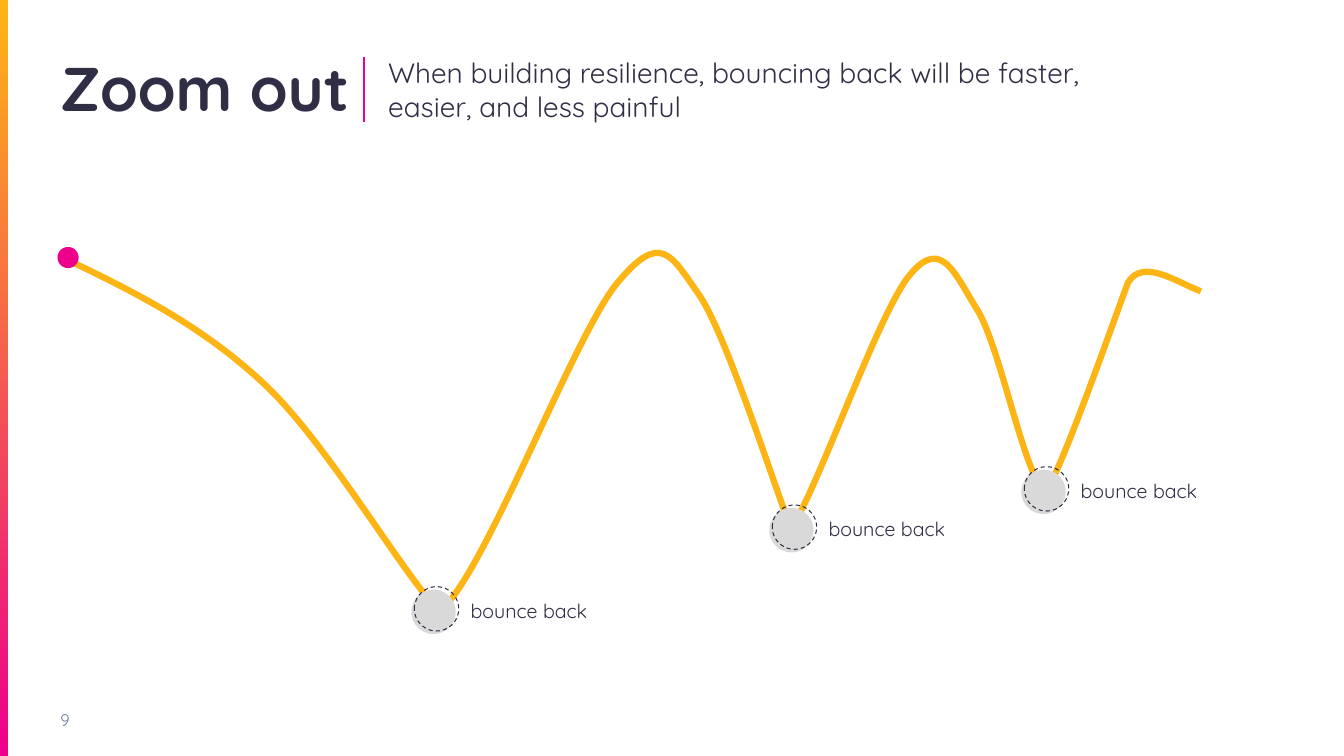
from lxml import etree
from pptx import Presentation
from pptx import util as u
from pptx.dml.color import RGBColor
from pptx.enum import dml, shapes, text

FONT = "Quicksand"
DRAWING = "{http://schemas.openxmlformats.org/drawingml/2006/main}"
COLORS = {"ink": "302E45", "orange": "FDB515", "pink": "EC008C",
          "ball": "D9D9D9", "number": "6E7CA0"}
SLIDE_WIDTH, SLIDE_HEIGHT = 13.33, 7.5

TITLE = "Zoom out"
SUBTITLE = ("When building resilience, bouncing back will be faster, "
            "easier, and less painful")
PAGE_NUMBER = "9"
BOUNCE_LABEL = "bounce back"
BOUNCES = [(4.08, 5.85), (7.63, 5.04), (10.13, 4.66)]
BALL_SIZE = 0.44
START_DOT = (0.57, 2.45, 0.21, 0.21)

# Each curve: two control points and an end point
CURVE_BOX = (0.59, 2.51, 11.32, 3.55)
CURVE_START = (0.59, 2.54)
CURVES = [
    ((1.28, 2.87), (1.98, 3.21), (2.61, 3.8)),
    ((3.24, 4.38), (4.04, 5.77), (4.36, 6.06)),
    ((4.78, 5.76), (5.69, 3.33), (6.12, 2.81)),
    ((6.55, 2.29), (6.65, 2.52), (6.93, 2.92)),
    ((7.22, 3.33), (7.77, 5.11), (7.85, 5.24)),
    ((8.14, 4.78), (8.72, 3.08), (9.03, 2.72)),
    ((9.34, 2.35), (9.47, 2.72), (9.69, 3.07)),
    ((9.92, 3.43), (10.17, 4.77), (10.36, 4.85)),
    ((10.41, 5.02), (11.18, 2.8), (11.19, 2.8)),
    ((11.34, 2.56), (11.67, 2.8), (11.91, 2.89)),
]


def color(name):
    return RGBColor.from_string(COLORS[name])


def inches(*values):
    return [u.Inches(value) for value in values]


def add_text(parent, content, box, size, color_name="ink", bold=False,
             insets=(0, 0, 0, 0), anchor=text.MSO_ANCHOR.TOP):
    frame = parent.shapes.add_textbox(*inches(*box)).text_frame
    frame.word_wrap = True
    frame.vertical_anchor = anchor
    (frame.margin_left, frame.margin_top,
     frame.margin_right, frame.margin_bottom) = inches(*insets)
    frame.text = content
    font = frame.paragraphs[0].runs[0].font
    font.name, font.size, font.bold = FONT, u.Pt(size), bold
    font.color.rgb = color(color_name)


def add_filled(parent, preset, box, color_name):
    shape = parent.shapes.add_shape(preset, *inches(*box))
    shape.shadow.inherit = False
    shape.fill.solid()
    shape.fill.fore_color.rgb = color(color_name)
    shape.line.fill.background()
    return shape


def style_line(shape, color_name, width):
    shape.line.color.rgb = color(color_name)
    shape.line.width = u.Pt(width)


def add_side_bar(slide):
    bar = add_filled(slide, shapes.MSO_SHAPE.RECTANGLE,
                     (0, 0, 0.08, SLIDE_HEIGHT), "orange")
    bar.fill.gradient()
    bar.fill.gradient_angle = 270
    for stop, position, name in zip(bar.fill.gradient_stops, (0, 1),
                                    ("orange", "pink")):
        stop.position = position
        stop.color.rgb = color(name)


def add_header(slide):
    add_text(slide, TITLE, (0.6, 0.5, 6.94, 0.61), 44, bold=True)
    divider = slide.shapes.add_connector(
        shapes.MSO_CONNECTOR.STRAIGHT, *inches(3.61, 0.57, 3.61, 1.21))
    style_line(divider, "pink", 1.5)
    etree.SubElement(divider._element.spPr, DRAWING + "effectLst")
    add_text(slide, SUBTITLE, (3.85, 0.55, 6.94, 0.61), 20)


def bend_segments(shape):
    """Turn the straight segments of the freeform into cubic curves."""
    shape.left, shape.top, shape.width, shape.height = inches(*CURVE_BOX)
    outline = next(shape._element.iter(DRAWING + "path"))
    outline.set("w", str(shape.width))
    outline.set("h", str(shape.height))
    for segment in list(outline):
        outline.remove(segment)
    steps = [("moveTo", [CURVE_START])]
    steps += [("cubicBezTo", curve) for curve in CURVES]
    for tag, points in steps:
        segment = etree.SubElement(outline, DRAWING + tag)
        for x, y in points:
            etree.SubElement(segment, DRAWING + "pt",
                             x=str(u.Inches(x) - shape.left),
                             y=str(u.Inches(y) - shape.top))


def add_bounce_path(slide):
    builder = slide.shapes.build_freeform(*inches(*CURVE_START))
    builder.add_line_segments([inches(*curve[-1]) for curve in CURVES],
                              close=False)
    bounce_path = builder.convert_to_shape()
    bend_segments(bounce_path)
    bounce_path.shadow.inherit = False
    bounce_path.fill.background()
    style_line(bounce_path, "orange", 4.5)
    add_filled(slide, shapes.MSO_SHAPE.OVAL, START_DOT, "pink")


def add_bounce(slide, left, top):
    group = slide.shapes.add_group_shape()
    oval = shapes.MSO_SHAPE.OVAL
    add_filled(group, oval, (left, top, BALL_SIZE, BALL_SIZE), "ball")
    ring = add_filled(
        group, oval, (left + 0.03, top - 0.03, BALL_SIZE, BALL_SIZE), "ball")
    ring.fill.background()
    style_line(ring, "ink", 0.75)
    ring.line.dash_style = dml.MSO_LINE.DASH
    add_text(group, BOUNCE_LABEL, (left + 0.49, top + 0.04, 1.5, 0.34), 14,
             insets=(0.1, 0.05, 0.1, 0.05))


def main():
    presentation = Presentation()
    presentation.slide_width = u.Inches(SLIDE_WIDTH)
    presentation.slide_height = u.Inches(SLIDE_HEIGHT)
    slide = presentation.slides.add_slide(presentation.slide_layouts[6])

    add_text(slide, PAGE_NUMBER, (0.6, 6.94, 0.69, 0.4), 12, "number",
             insets=(0, 0.05, 0.1, 0.05), anchor=text.MSO_ANCHOR.MIDDLE)
    add_side_bar(slide)
    add_bounce_path(slide)
    for left, top in BOUNCES:
        add_bounce(slide, left, top)
    add_header(slide)
    presentation.save("out.pptx")


if __name__ == "__main__":
    main()
